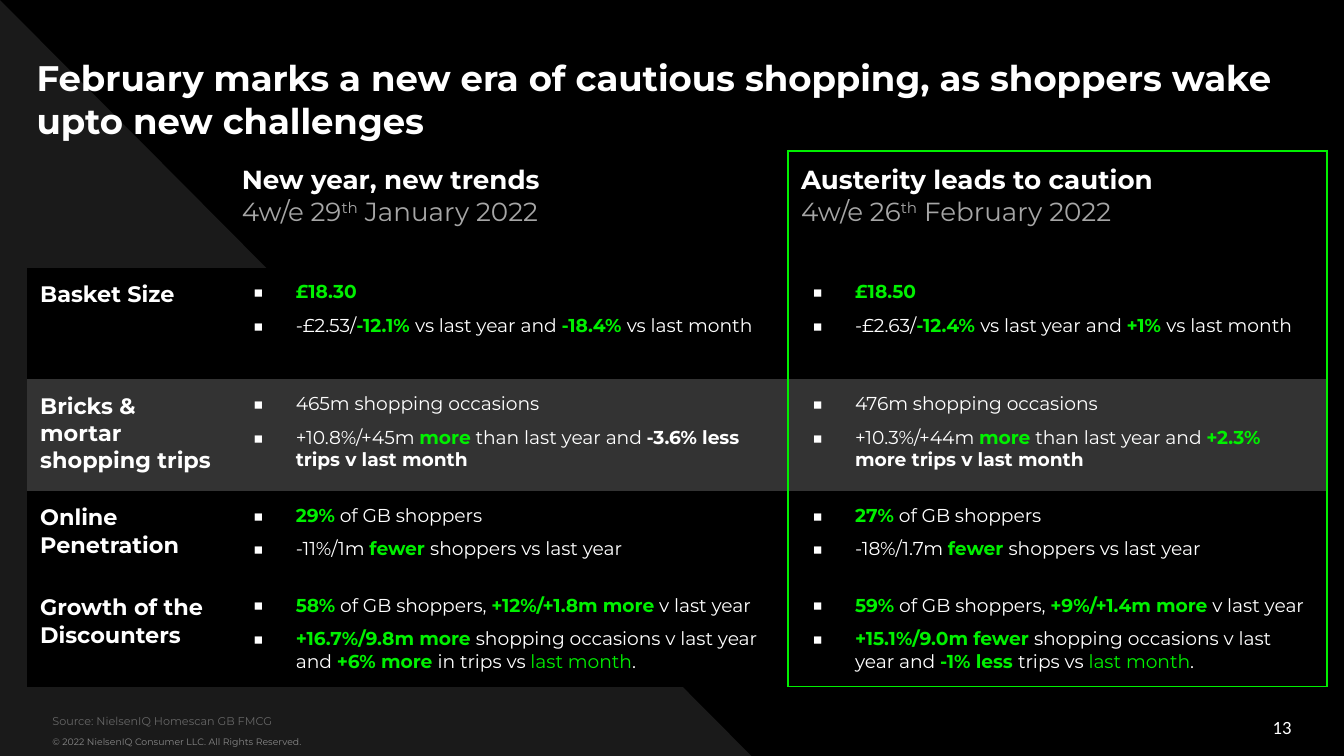
from dataclasses import dataclass

from lxml import etree
from pptx import Presentation
from pptx.dml.color import RGBColor
from pptx.enum.shapes import MSO_SHAPE
from pptx.enum.text import MSO_ANCHOR, MSO_AUTO_SIZE, PP_ALIGN
from pptx.oxml.ns import qn
from pptx.util import Cm, Pt

RIGHT_TRIANGLE = MSO_SHAPE.RIGHT_TRIANGLE
TOP, MIDDLE, BOTTOM = MSO_ANCHOR.TOP, MSO_ANCHOR.MIDDLE, MSO_ANCHOR.BOTTOM
LEFT, RIGHT = PP_ALIGN.LEFT, PP_ALIGN.RIGHT
NO_AUTOFIT = MSO_AUTO_SIZE.NONE


@dataclass(frozen=True)
class Theme:
    font: str = "Montserrat"
    number_font: str = "Calibri"
    background: str = "000000"
    corner: str = "1A1A1A"
    band: str = "333333"
    text: str = "FFFFFF"
    accent: str = "00F000"
    date: str = "A6A6A6"
    source: str = "666666"
    copyright: str = "888888"
    title_size: float = 19
    heading_size: float = 14
    label_size: float = 12
    body_size: float = 10
    source_size: float = 6
    copyright_size: float = 5


THEME = Theme()


def strong(text):
    return text, THEME.text, True


def good(text):
    return text, THEME.accent, True


def green(text):
    return text, THEME.accent, False


HEADINGS = [
    ("New year, new trends", "4w/e 29", " January 2022"),
    ("Austerity leads to caution", "4w/e 26", " February 2022"),
]
# Row label, fill, then the bullets for January and for February
METRICS = [
    ("Basket Size", THEME.background,
     [[good("£18.30")],
      ["-£2.53/", good("-12.1% "), "vs last year and ", good("-18.4% "), "vs last month"]],
     [[good("£18.50")],
      ["-£2.63/", good("-12.4% "), "vs last year and ", good("+1% "), "vs last month"]]),
    ("Bricks & mortar shopping trips", THEME.band,
     [["465m shopping occasions"],
      ["+10.8%/+45m ", good("more"), " than last year and ",
       strong("-3.6% less trips v last month")]],
     [["476m shopping occasions"],
      ["+10.3%/+44m ", good("more"), " than last year and ", good("+2.3%"),
       strong(" more trips v last month")]]),
    ("Online Penetration", THEME.background,
     [[good("29%"), " of GB shoppers"],
      ["-11%/1m ", good("fewer "), "shoppers vs last year"]],
     [[good("27%"), " of GB shoppers"],
      ["-18%/1.7m ", good("fewer "), "shoppers vs last year"]]),
    ("Growth of the Discounters", THEME.background,
     [[good("58%"), " of GB shoppers, ", good("+12%/+1.8m more"), " v last year"],
      [good("+16.7%/9.8m more "), "shopping occasions v last year and ",
       good("+6% more "), "in trips vs ", green("last month"), "."]],
     [[good("59%"), " of GB shoppers, ", good("+9%/+1.4m more"), " v last year"],
      [good("+15.1%/9.0m fewer "), "shopping occasions v last year and ",
       good("-1% less "), "trips vs ", green("last month"), "."]]),
]


class SlideBuilder:
    def __init__(self, slide, theme):
        self.slide = slide
        self.theme = theme
        slide.background.fill.solid()
        slide.background.fill.fore_color.rgb = RGBColor.from_string(theme.background)

    def style(self, run, size, color, bold=False, font=None):
        run.font.name = font or self.theme.font
        run.font.size = Pt(size)
        run.font.bold = bold
        run.font.color.rgb = RGBColor.from_string(color)

    def corner(self, width, height):
        """Draw the corner triangle behind everything else on the slide."""
        shapes = self.slide.shapes
        triangle = shapes.add_shape(RIGHT_TRIANGLE, 0, 0, Cm(width), Cm(height))
        triangle.shadow.inherit = False
        triangle.fill.solid()
        triangle.fill.fore_color.rgb = RGBColor.from_string(self.theme.corner)
        triangle.line.fill.background()
        shapes[0].element.addprevious(triangle.element)

    def line_of_text(self, holder, text, size, color, inset, anchor=TOP,
                     align=LEFT, bold=False, font=None):
        frame = holder.text_frame
        frame.word_wrap = True
        frame.auto_size = NO_AUTOFIT
        frame.vertical_anchor = anchor
        frame.margin_left = frame.margin_right = 0
        frame.margin_top = frame.margin_bottom = Cm(inset)
        frame.text = text
        paragraph = frame.paragraphs[0]
        paragraph.alignment = align
        paragraph.space_before = Pt(0)
        self.style(paragraph.runs[0], size, color, bold, font)
        return paragraph

    def placeholder(self, holder, box, text, size, color, **options):
        holder.left, holder.top, holder.width, holder.height = map(Cm, box)
        paragraph = self.line_of_text(holder, text, size, color, 0.25, **options)
        properties = paragraph._p.get_or_add_pPr()
        properties.set("marL", "0")
        properties.set("indent", "0")
        etree.SubElement(properties, qn("a:buNone"))

    def text_box(self, box, text, size, color, **options):
        holder = self.slide.shapes.add_textbox(*map(Cm, box))
        self.line_of_text(holder, text, size, color, 0.13, **options)

    def table(self, left, top, widths, heights):
        frame = self.slide.shapes.add_table(
            len(heights), len(widths), Cm(left), Cm(top), Cm(sum(widths)), Cm(sum(heights)))
        table = frame.table
        table.first_row = table.horz_banding = False
        for column, width in zip(table.columns, widths):
            column.width = Cm(width)
        for row, height in zip(table.rows, heights):
            row.height = Cm(height)
        return table

    def cell(self, cell, fill=None, accent_sides=""):
        """Fill the cell and draw accent lines on the given sides out of L, R, T, B."""
        cell.margin_left = cell.margin_right = Cm(0.25)
        cell.margin_top = cell.margin_bottom = Cm(0.25)
        if fill:
            cell.fill.solid()
            cell.fill.fore_color.rgb = RGBColor.from_string(fill)
        else:
            cell.fill.background()
        properties = cell._tc.get_or_add_tcPr()
        for position, side in enumerate("LRTB"):
            border = etree.Element(qn(f"a:ln{side}"), w=str(Pt(1)))
            if side in accent_sides:
                paint = etree.SubElement(border, qn("a:solidFill"))
                etree.SubElement(paint, qn("a:srgbClr"), val=self.theme.accent)
            else:
                etree.SubElement(border, qn("a:noFill"))
            properties.insert(position, border)

    def heading(self, cell, headline, date_start, date_end):
        theme = self.theme
        cell.text_frame.text = headline
        self.style(cell.text_frame.paragraphs[0].runs[0], theme.heading_size, theme.text, True)
        date = cell.text_frame.add_paragraph()
        for part in (date_start, "th", date_end):
            run = date.add_run()
            run.text = part
            self.style(run, theme.heading_size, theme.date)
        date.runs[1]._r.get_or_add_rPr().set("baseline", "30000")

    def label(self, cell, text):
        cell.text_frame.text = text
        self.style(cell.text_frame.paragraphs[0].runs[0],
                   self.theme.label_size, self.theme.text, True)

    def bullets(self, cell, items):
        frame = cell.text_frame
        for index, spans in enumerate(items):
            paragraph = frame.add_paragraph() if index else frame.paragraphs[0]
            paragraph.space_before = Pt(6 if index else 0)
            properties = paragraph._p.get_or_add_pPr()
            properties.set("marL", str(Cm(1.02)))
            properties.set("indent", str(-Cm(0.81)))
            bullet_color = etree.SubElement(properties, qn("a:buClr"))
            etree.SubElement(bullet_color, qn("a:srgbClr"), val=self.theme.text)
            etree.SubElement(properties, qn("a:buFont"), typeface=self.theme.font)
            etree.SubElement(properties, qn("a:buChar"), char="■")
            for span in spans:
                text, color, bold = (span, self.theme.text, False) if isinstance(span, str) else span
                run = paragraph.add_run()
                run.text = text
                self.style(run, self.theme.body_size, color, bold)


def main():
    deck = Presentation()
    deck.slide_width, deck.slide_height = Cm(25.4), Cm(14.29)
    slide = deck.slides.add_slide(deck.slide_layouts[1])
    builder = SlideBuilder(slide, THEME)

    builder.corner(14.2, 14.29)
    builder.text_box((0.99, 13.79, 14.07, 0.5),
                     "© 2022 NielsenIQ Consumer LLC. All Rights Reserved.",
                     THEME.copyright_size, THEME.copyright)
    builder.text_box((18.69, 13.36, 5.72, 0.76), "13", THEME.body_size, THEME.text,
                     anchor=MIDDLE, align=RIGHT, font=THEME.number_font)
    builder.placeholder(slide.placeholders[1], (0.99, 13.49, 22.66, 0.51),
                        "Source: NielsenIQ Homescan GB FMCG",
                        THEME.source_size, THEME.source, anchor=BOTTOM)
    builder.placeholder(slide.shapes.title, (0.69, 0.81, 24.38, 1.88),
                        "February marks a new era of cautious shopping, "
                        "as shoppers wake upto new challenges",
                        THEME.title_size, THEME.text, bold=True)

    table = builder.table(0.51, 2.85, (3.81, 10.57, 10.19), (2.21, 2.11, 2.11, 1.7, 1.7))
    builder.cell(table.cell(0, 0))
    for column, (heading, sides) in enumerate(zip(HEADINGS, ("R", "LRT")), start=1):
        builder.cell(table.cell(0, column), accent_sides=sides)
        builder.heading(table.cell(0, column), *heading)
    for row, (label, fill, january, february) in enumerate(METRICS, start=1):
        february_sides = "LRB" if row == len(METRICS) else "LR"
        for column, sides in enumerate(("", "R", february_sides)):
            builder.cell(table.cell(row, column), fill, sides)
        builder.label(table.cell(row, 0), label)
        builder.bullets(table.cell(row, 1), january)
        builder.bullets(table.cell(row, 2), february)

    deck.save("out.pptx")


if __name__ == "__main__":
    main()
